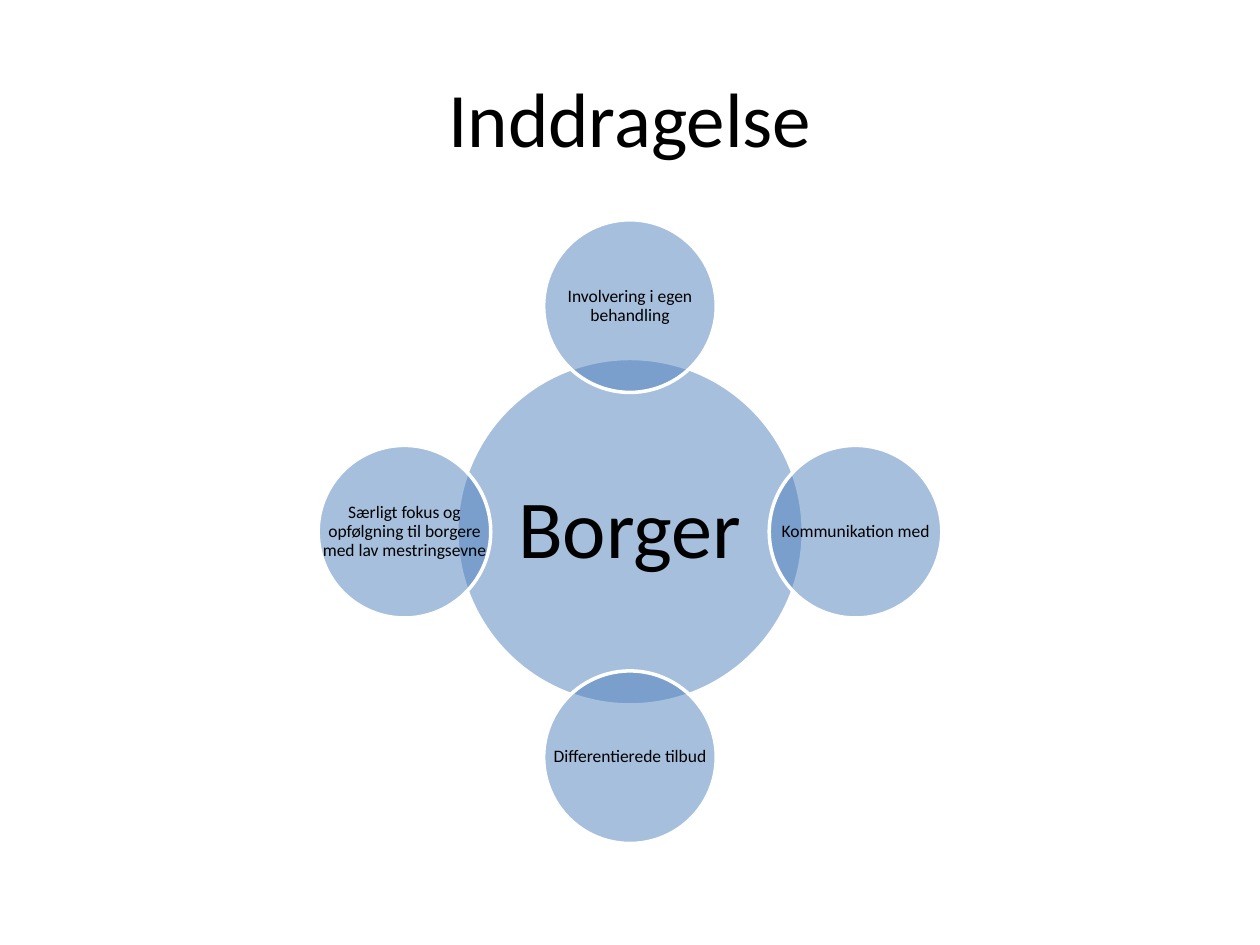
"""Build a slide with a citizen circle surrounded by four forms of involvement."""
import lxml.etree
import pptx
import pptx.dml.color
import pptx.enum.shapes
import pptx.enum.text
import pptx.oxml.ns
import pptx.util

Inches = pptx.util.Inches
COLOURS = {"circle": "4F81BD", "outline": "FFFFFF", "text": "000000"}


def rgb(role):
    return pptx.dml.color.RGBColor.from_string(COLOURS[role])


def add_label(shapes, wording, box, size, margin, spacing):
    label = shapes.add_textbox(*[Inches(length) for length in box])
    frame_format = {
        "word_wrap": True,
        "vertical_anchor": pptx.enum.text.MSO_ANCHOR.MIDDLE,
        "margin_left": Inches(margin),
        "margin_right": Inches(margin),
        "margin_top": Inches(margin),
        "margin_bottom": Inches(margin),
    }
    for attribute, value in frame_format.items():
        setattr(label.text_frame, attribute, value)
    paragraph = label.text_frame.paragraphs[0]
    paragraph.text = wording
    paragraph.alignment = pptx.enum.text.PP_ALIGN.CENTER
    paragraph.line_spacing = spacing
    font_format = {"name": "Calibri", "size": pptx.util.Pt(size)}
    for attribute, value in font_format.items():
        setattr(paragraph.runs[0].font, attribute, value)
    paragraph.runs[0].font.color.rgb = rgb("text")


presentation = pptx.Presentation()
presentation.slide_width = Inches(10)
presentation.slide_height = Inches(7.5)
slide = presentation.slides.add_slide(presentation.slide_layouts[6])

add_label(slide.shapes, "Inddragelse", (0.5, 0.3, 9, 1.25), 44, 0.05, 1.0)

centre_x, centre_y = 5, 4.22
orbit = 1.79
citizen_style = (2.75, 47, 0.07)
theme_style = (1.37, 10, 0.01)
circles = [
    ("Borger", 0, 0, citizen_style),
    ("Involvering i egen behandling", 0, -1, theme_style),
    ("Kommunikation med", 1, 0, theme_style),
    ("Differentierede tilbud", 0, 1, theme_style),
    ("Særligt fokus og opfølgning til borgere med lav mestringsevne", -1, 0, theme_style),
]

diagram = slide.shapes.add_group_shape()
for wording, step_x, step_y, (diameter, size, margin) in circles:
    left = centre_x + step_x * orbit - diameter / 2
    top = centre_y + step_y * orbit - diameter / 2
    box = (left, top, diameter, diameter)
    circle = diagram.shapes.add_shape(
        pptx.enum.shapes.MSO_SHAPE.OVAL, *[Inches(length) for length in box]
    )
    circle.shadow.inherit = False
    circle.fill.solid()
    circle.fill.fore_color.rgb = rgb("circle")
    fill_colour = circle.fill._xPr.find(".//" + pptx.oxml.ns.qn("a:srgbClr"))
    lxml.etree.SubElement(fill_colour, pptx.oxml.ns.qn("a:alpha"), val="50000")
    circle.line.color.rgb = rgb("outline")
    circle.line.width = pptx.util.Pt(2)
    add_label(diagram.shapes, wording, box, size, margin, 0.9)

presentation.save("out.pptx")
